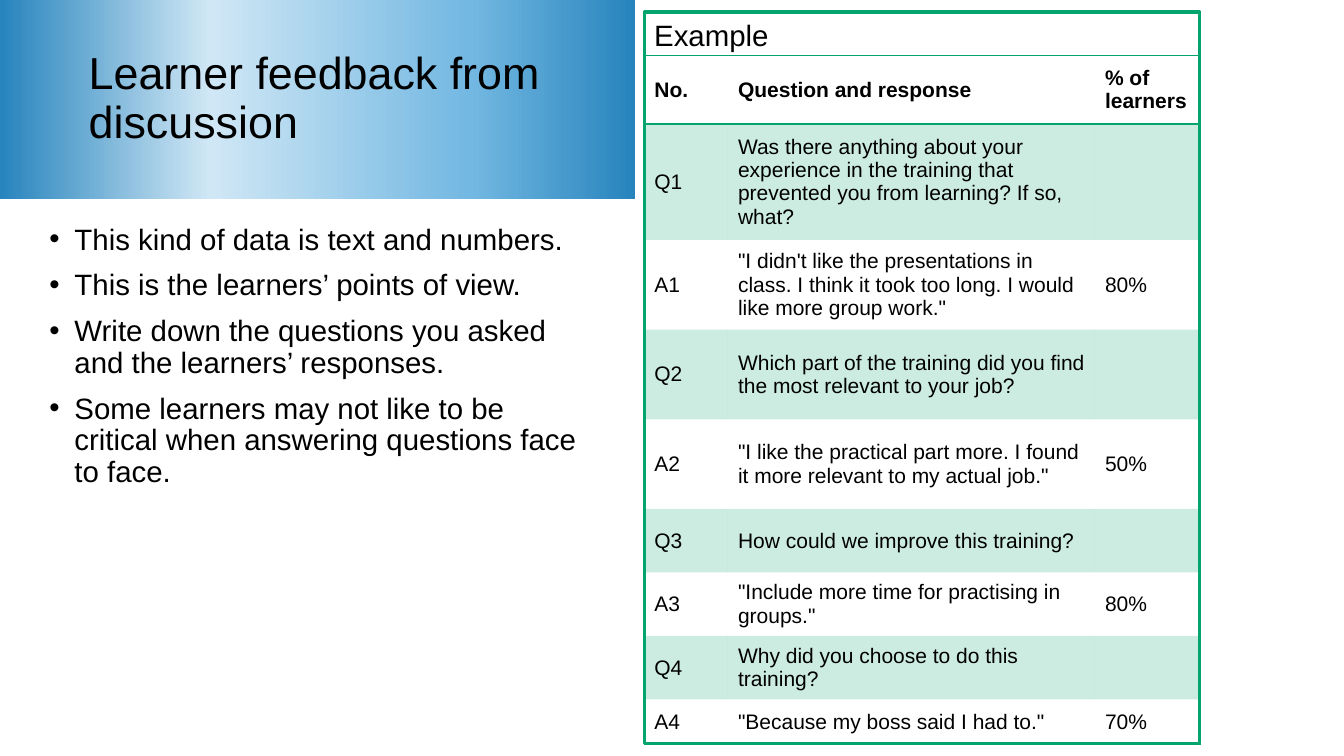
from lxml.etree import SubElement
from pptx import Presentation
from pptx.dml.color import RGBColor
from pptx.enum.shapes import MSO_SHAPE as Preset
from pptx.enum.text import MSO_ANCHOR as Anchor, MSO_AUTO_SIZE as AutoSize, PP_ALIGN as Align
from pptx.oxml.ns import qn
from pptx.util import Inches, Pt

GREEN = "03A46E"
BLACK = "000000"
NO_STYLE = "{2D5ABB26-0587-4C30-8999-92F81FD0307C}"
TITLE_STOPS = [(0, "2784BD"), (33, "D0E7F5"), (74, "73B8E2"), (100, "2784BD")]

POINTS = [
    "This kind of data is text and numbers.",
    "This is the learners’ points of view.",
    "Write down the questions you asked and the learners’ responses.",
    "Some learners may not like to be critical when answering questions face to face.",
]
FEEDBACK = [
    ("No.", "Question and response", "% of learners"),
    ("Q1", "Was there anything about your experience in the training that "
           "prevented you from learning? If so, what?", ""),
    ("A1", "\"I didn't like the presentations in class. I think it took too long. "
           "I would like more group work.\"", "80%"),
    ("Q2", "Which part of the training did you find the most relevant to your job?", ""),
    ("A2", "\"I like the practical part more. I found it more relevant to my actual job.\"", "50%"),
    ("Q3", "How could we improve this training?", ""),
    ("A3", "\"Include more time for practising in groups.\"", "80%"),
    ("Q4", "Why did you choose to do this training?", ""),
    ("A4", "\"Because my boss said I had to.\"", "70%"),
]
COLUMN_WIDTHS = [0.83, 3.64, 1.05]
ROW_HEIGHTS = [0.68, 1.15, 0.89, 0.89, 0.89, 0.63, 0.63, 0.63, 0.45]


def rgb(value):
    return RGBColor.from_string(value)


def place(shape, left, top, width, height):
    shape.left, shape.top = Inches(left), Inches(top)
    shape.width, shape.height = Inches(width), Inches(height)


def write(frame, paragraphs, size, bold=False, spacing=1.0, gap=0, indent=0, hanging=0, bullet=None):
    """Fill a text frame, one paragraph for each string."""
    frame.word_wrap = True
    for index, text in enumerate(paragraphs):
        paragraph = frame.paragraphs[0] if index == 0 else frame.add_paragraph()
        paragraph.text = text
        paragraph.alignment = Align.LEFT
        paragraph.line_spacing = spacing
        paragraph.space_before = Pt(gap if index else 0)
        properties = paragraph._p.get_or_add_pPr()
        properties.set("marL", str(Inches(indent)))
        properties.set("indent", str(Inches(-hanging)))
        if bullet:
            SubElement(properties, qn("a:buFont"), typeface="Arial")
            SubElement(properties, qn("a:buChar"), char=bullet)
        font = paragraph.font
        font.name, font.size, font.bold = "Arial", Pt(size), bold
        font.color.rgb = rgb(BLACK)


def fill_gradient(shape, stops):
    shape.fill.gradient()
    shape.fill.gradient_angle = 0
    stop_list = shape.fill._fill._gradFill.find(qn("a:gsLst"))
    for stop in list(stop_list):
        stop_list.remove(stop)
    for percent, color in stops:
        stop = SubElement(stop_list, qn("a:gs"), pos=str(percent * 1000))
        SubElement(stop, qn("a:srgbClr"), val=color)


def add_border(cell, side, color, width):
    line = SubElement(cell._tc.get_or_add_tcPr(), qn("a:ln" + side), w=str(Pt(width)))
    SubElement(SubElement(line, qn("a:solidFill")), qn("a:srgbClr"), val=color)


def tint(cell, color, percent):
    cell.fill.solid()
    cell.fill.fore_color.rgb = rgb(color)
    shade = cell._tc.tcPr.find(qn("a:solidFill")).find(qn("a:srgbClr"))
    SubElement(shade, qn("a:alpha"), val=str(percent * 1000))


def add_title(slide):
    title = slide.shapes.title
    place(title, 0, 0, 6.3, 1.97)
    fill_gradient(title, TITLE_STOPS)
    title.text_frame.auto_size = AutoSize.NONE
    title.text_frame.vertical_anchor = Anchor.MIDDLE
    write(title.text_frame, ["Learner feedback from discussion"], 32, spacing=0.9, indent=0.78)


def add_points(slide):
    points = slide.shapes.add_textbox(Inches(0.39), Inches(2.18), Inches(5.51), Inches(4.72))
    write(points.text_frame, POINTS, 21, spacing=0.9, gap=10, indent=0.25, hanging=0.25, bullet="•")


def add_example_frame(slide):
    example = slide.shapes.add_shape(
        Preset.RECTANGLE, Inches(6.39), Inches(0.12), Inches(5.51), Inches(7.26))
    example.shadow.inherit = False
    example.fill.background()
    example.line.color.rgb = rgb(GREEN)
    example.line.width = Pt(2.25)
    example.text_frame.vertical_anchor = Anchor.TOP
    write(example.text_frame, ["Example"], 21)


def add_feedback_table(slide):
    table = slide.shapes.add_table(
        len(FEEDBACK), len(COLUMN_WIDTHS),
        Inches(6.39), Inches(0.55), Inches(5.51), Inches(6.82)).table
    table.first_row = table.horz_banding = False
    table._tbl.tblPr.find(qn("a:tableStyleId")).text = NO_STYLE
    for column, width in zip(table.columns, COLUMN_WIDTHS):
        column.width = Inches(width)

    last = len(FEEDBACK) - 1
    for number, (row, height, texts) in enumerate(zip(table.rows, ROW_HEIGHTS, FEEDBACK)):
        row.height = Inches(height)
        sides = {0: "TB", last: "B"}.get(number, "")
        for cell, text in zip(row.cells, texts):
            cell.vertical_anchor = Anchor.MIDDLE
            write(cell.text_frame, [text], 15, bold=number == 0)
            for side in sides:
                add_border(cell, side, GREEN, 1)
            # Questions are tinted, answers are plain
            if texts[0].startswith("Q"):
                tint(cell, GREEN, 20)
            else:
                cell.fill.background()


def main():
    deck = Presentation()
    deck.slide_width, deck.slide_height = Inches(13.33), Inches(7.5)
    slide = deck.slides.add_slide(deck.slide_layouts[5])

    # Left half: title and points
    add_title(slide)
    add_points(slide)

    # Right half: worked example
    add_example_frame(slide)
    add_feedback_table(slide)
    deck.save("out.pptx")


if __name__ == "__main__":
    main()
